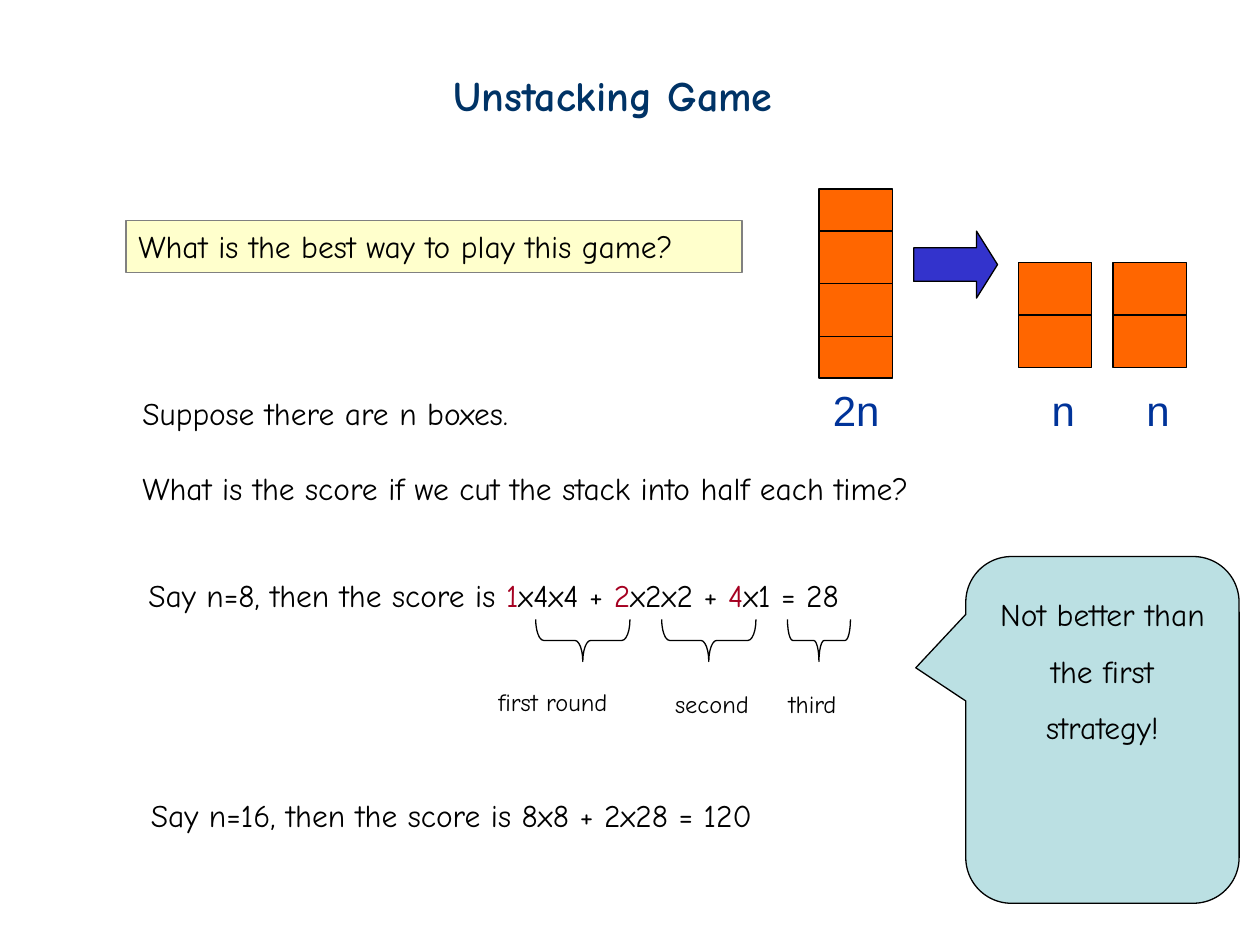
"""Build the slide on the best way to play the unstacking game."""
import pptx
import pptx.dml.color
import pptx.enum.shapes
import pptx.enum.text
import pptx.util

Cm = pptx.util.Cm
Pt = pptx.util.Pt
KIND = pptx.enum.shapes.MSO_SHAPE
ALIGN = pptx.enum.text.PP_ALIGN
ANCHOR = pptx.enum.text.MSO_ANCHOR
BLACK = "000000"
RED = "A50021"


def tint(code):
    return pptx.dml.color.RGBColor.from_string(code)


def write(frame, *lines, size=18, font="Comic Neue", color=BLACK, bold=False,
          align=ALIGN.LEFT, pitch=None, gap=0, wrap=False):
    frame.word_wrap = wrap
    frame.vertical_anchor = ANCHOR.TOP
    for index, line in enumerate(lines):
        para = frame.add_paragraph() if index else frame.paragraphs[0]
        para.alignment = align
        if pitch:
            para.line_spacing = pitch
        if index and gap:
            para.space_before = Pt(gap)
        parts = [(line, color)] if isinstance(line, str) else line
        for words, shade in parts:
            run = para.add_run()
            run.text = words
            run.font.size = Pt(size)
            run.font.name = font
            run.font.bold = bold
            run.font.color.rgb = tint(shade)


def label(slide, left, top, width, height, *lines, **style):
    area = slide.shapes.add_textbox(Cm(left), Cm(top), Cm(width), Cm(height))
    write(area.text_frame, *lines, **style)


def draw(slide, kind, left, top, width, height, fill=None, line=BLACK, adjust=()):
    shape = slide.shapes.add_shape(kind, Cm(left), Cm(top), Cm(width), Cm(height))
    shape.shadow.inherit = False
    if fill:
        shape.fill.solid()
        shape.fill.fore_color.rgb = tint(fill)
    else:
        shape.fill.background()
    shape.line.color.rgb = tint(line)
    shape.line.width = Pt(0.75)
    for index, value in enumerate(adjust):
        shape.adjustments[index] = value
    return shape


def stack(slide, left, tops, name, inset, width):
    for top in tops:
        draw(slide, KIND.RECTANGLE, left, top, 1.48, 1.06, "FF6600")
    label(slide, left + inset, 7.62, width, 1.27, name,
          size=24, font="Arial", color="003399")


def brace(slide, mid, span, curve):
    deep = 0.85
    shape = draw(slide, KIND.LEFT_BRACE, mid - deep / 2, 12.91 - span / 2,
                 deep, span, adjust=(curve, 0.5))
    shape.rotation = 270


def main():
    deck = pptx.Presentation()
    deck.slide_width, deck.slide_height = Cm(25.4), Cm(19.05)
    slide = deck.slides.add_slide(deck.slide_layouts[6])

    note = draw(slide, KIND.ROUNDED_RECTANGULAR_CALLOUT, 19.47, 11.22, 5.51, 6.99,
                "BBE0E3", adjust=(-0.683, -0.179, 0.167))
    write(note.text_frame, "Not better than the first strategy!",
          align=ALIGN.CENTER, pitch=1.5, wrap=True)
    label(slide, 8.89, 1.27, 7.44, 1.27, "Unstacking Game",
          size=24, color="003366", bold=True)

    stack(slide, 16.51, (6.56, 3.81, 4.66, 5.72), "2n", 0.03, 1.45)
    for left in (20.53, 22.44):
        stack(slide, left, (5.29, 6.35), "n", 0.42, 0.99)
    draw(slide, KIND.RIGHT_ARROW, 18.42, 4.66, 1.69, 1.35, "3333CC",
         adjust=(0.5, 0.314))

    ask = draw(slide, KIND.RECTANGLE, 2.54, 4.45, 12.42, 1.04, "FFFFCC", "808080")
    write(ask.text_frame, "What is the best way to play this game?")
    label(slide, 2.62, 7.82, 17.75, 2.54, "Suppose there are n boxes.",
          "What is the score if we cut the stack into half each time?", gap=21.5)
    score = [("Say n=8, then the score is ", BLACK), ("1", RED), ("x4x4 + ", BLACK),
             ("2", RED), ("x2x2 + ", BLACK), ("4", RED), ("x1 = 28", BLACK)]
    label(slide, 2.74, 11.48, 16.05, 1.02, score)

    rounds = [("first round", 11.75, 1.9, 0.188, 9.8, 13.72, 3.07),
              ("second", 14.29, 1.9, 0.188, 13.36, 13.77, 2.08),
              ("third", 16.51, 1.27, 0.125, 15.65, 13.77, 1.7)]
    for name, mid, span, curve, left, top, width in rounds:
        brace(slide, mid, span, curve)
        label(slide, left, top, width, 0.84, name, size=14)
    label(slide, 2.79, 15.93, 13.84, 1.02,
          "Say n=16, then the score is 8x8 + 2x28 = 120")

    deck.save("out.pptx")


if __name__ == "__main__":
    main()
